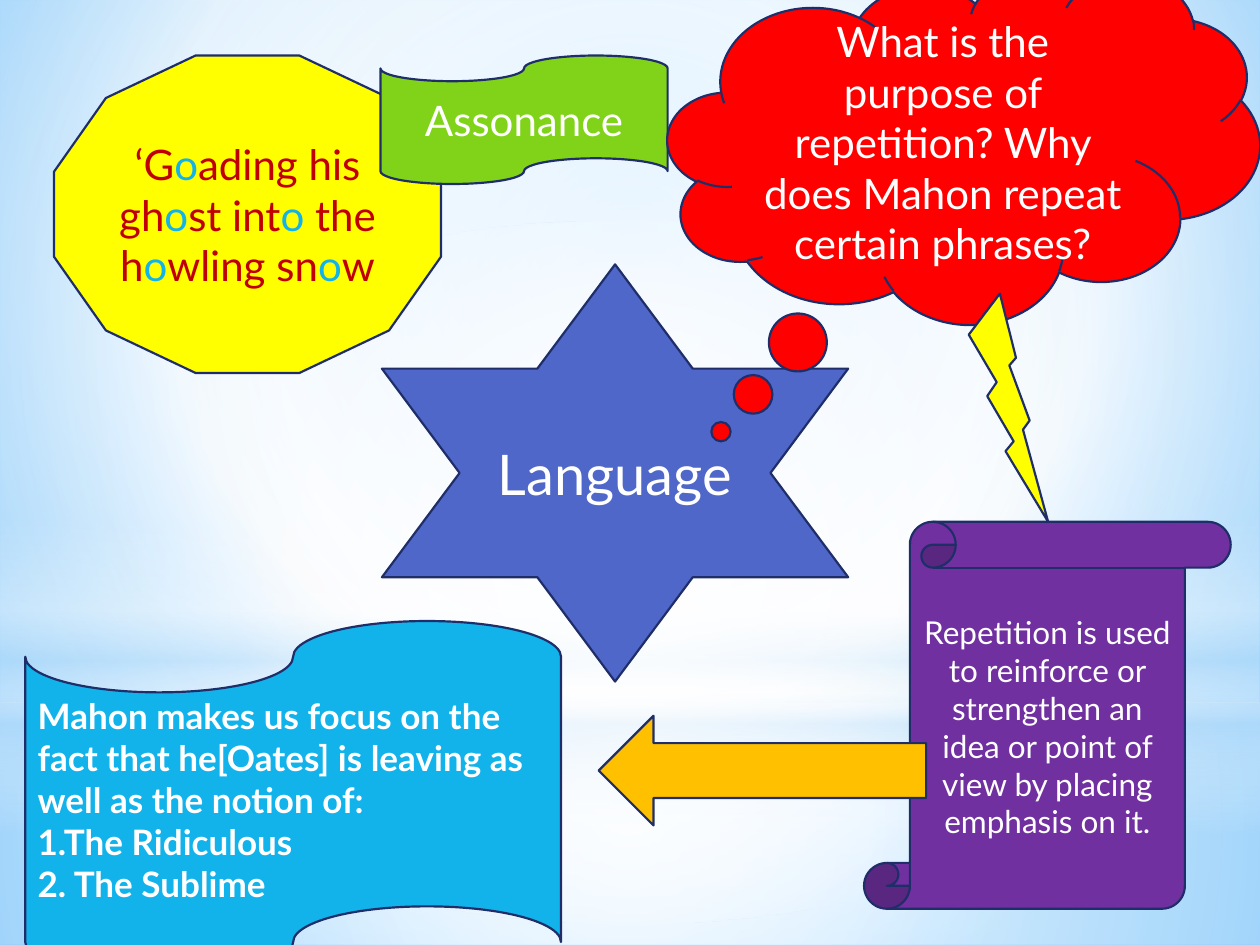
from pptx import Presentation
from pptx.dml.color import RGBColor
from pptx.enum.shapes import MSO_SHAPE as Preset
from pptx.enum.text import MSO_ANCHOR as Anchor, PP_ALIGN as Align
from pptx.oxml import parse_xml
from pptx.oxml.ns import nsdecls, qn
from pptx.util import Cm, Pt

WHITE = RGBColor(0xFF, 0xFF, 0xFF)
NAVY = RGBColor(0x1F, 0x2E, 0x69)
INDIGO = RGBColor(0x4E, 0x67, 0xC8)
YELLOW = RGBColor(0xFF, 0xFF, 0x00)
GREEN = RGBColor(0x81, 0xD3, 0x1A)
RED = RGBColor(0xFF, 0x00, 0x00)
DARK_RED = RGBColor(0xC0, 0x00, 0x00)
PURPLE = RGBColor(0x70, 0x30, 0xA0)
AMBER = RGBColor(0xFF, 0xC0, 0x00)
CYAN = RGBColor(0x12, 0xB2, 0xEB)
SKY = RGBColor(0x9E, 0xD5, 0xFF)
DEEP_SKY = RGBColor(0x5B, 0xB9, 0xFF)
PALE_SKY = RGBColor(0xB4, 0xDC, 0xFA)

CENTRE = (50, 50, 50, 50)


class Board:
    font = "Lato"
    outline = NAVY
    outline_width = Pt(1.25)

    def __init__(self, slide):
        self.slide = slide

    def gradient(self, fill, owner, stops, focus):
        fill.gradient()
        old = owner.find(".//" + qn("a:gradFill"))
        colours = "".join(
            f'<a:gs pos="{position * 1000}"><a:srgbClr val="{colour}">'
            f'<a:alpha val="{opacity * 1000}"/></a:srgbClr></a:gs>'
            for position, colour, opacity in stops
        )
        if focus:
            left, top, right, bottom = (side * 1000 for side in focus)
            shade = (
                f'<a:path path="circle"><a:fillToRect l="{left}" t="{top}" '
                f'r="{right}" b="{bottom}"/></a:path>'
            )
        else:
            shade = '<a:lin ang="5400000" scaled="0"/>'
        new = parse_xml(
            f'<a:gradFill {nsdecls("a")} rotWithShape="1">'
            f"<a:gsLst>{colours}</a:gsLst>{shade}</a:gradFill>"
        )
        old.getparent().replace(old, new)

    def backdrop(self, stops, focus):
        self.gradient(self.slide.background.fill, self.slide.element, stops, focus)

    def place(self, preset, box):
        shape = self.slide.shapes.add_shape(preset, *(Cm(n) for n in box))
        shape.shadow.inherit = False
        return shape

    def glow(self, preset, box, stops, focus=CENTRE):
        layer = self.place(preset, box)
        layer.line.fill.background()
        self.gradient(layer.fill, layer.element, stops, focus)

    def figure(self, preset, box, colour):
        shape = self.place(preset, box)
        shape.fill.solid()
        shape.fill.fore_color.rgb = colour
        shape.line.color.rgb = self.outline
        shape.line.width = self.outline_width
        return shape

    def style(self, run, size, colour=WHITE, bold=False):
        run.font.name = self.font
        run.font.size = Pt(size)
        run.font.color.rgb = colour
        run.font.bold = bold

    def label(self, shape, text, size, bold=False, align=Align.CENTER):
        frame = shape.text_frame
        frame.word_wrap = True
        frame.vertical_anchor = Anchor.MIDDLE
        frame.text = text
        for paragraph in frame.paragraphs:
            paragraph.alignment = align
            for run in paragraph.runs:
                self.style(run, size, bold=bold)

    def vowel_label(self, shape, text, vowel, size, colour, vowel_colour):
        self.label(shape, "", size)
        paragraph = shape.text_frame.paragraphs[0]
        for part in text.replace(vowel, f"|{vowel}|").split("|"):
            run = paragraph.add_run()
            run.text = part
            self.style(run, size, vowel_colour if part == vowel else colour)


def main():
    deck = Presentation()
    deck.slide_width, deck.slide_height = Cm(25.4), Cm(19.05)
    board = Board(deck.slides.add_slide(deck.slide_layouts[6]))

    board.backdrop(
        [(0, SKY, 100), (60, WHITE, 100), (100, DEEP_SKY, 100)], (20, 10, 20, 60)
    )
    board.glow(Preset.RECTANGLE, (0, 14.17, 25.4, 4.88),
               [(0, WHITE, 91), (37, WHITE, 76), (100, PALE_SKY, 79)])
    board.glow(Preset.RECTANGLE, (0, 0, 25.4, 14.17),
               [(0, WHITE, 89), (48, WHITE, 62), (100, PALE_SKY, 79)])
    board.glow(Preset.RECTANGLE, (0, 10.46, 25.4, 6.35),
               [(0, WHITE, 0), (29, WHITE, 30), (45, PALE_SKY, 40),
                (55, WHITE, 26), (65, PALE_SKY, 60), (100, WHITE, 0)], None)
    board.glow(Preset.OVAL, (0, 4.45, 25.4, 14.17),
               [(0, WHITE, 100), (56, WHITE, 0)])

    topic = board.figure(Preset.STAR_6_POINT, (7.7, 5.33, 9.4, 8.41), INDIGO)
    board.label(topic, "Language", 32)

    quote = board.figure(Preset.DODECAGON, (1.09, 1.12, 7.8, 6.4), YELLOW)
    board.vowel_label(quote, "‘Goading his ghost into the howling snow", "o",
                      24, DARK_RED, CYAN)

    device = board.figure(
        Preset.FLOWCHART_PUNCHED_TAPE, (7.67, 1.12, 5.79, 2.59), GREEN)
    board.label(device, "Assonance", 24)

    question = board.figure(Preset.CLOUD_CALLOUT, (13.46, -0.48, 11.94, 7.01), RED)
    question.adjustments[0] = -0.41
    question.adjustments[1] = 0.81
    board.label(
        question,
        "What is the purpose of repetition? Why does Mahon repeat certain phrases?",
        24,
    )

    board.figure(Preset.LIGHTNING_BOLT, (19.53, 5.92, 1.6, 4.6), YELLOW)

    answer = board.figure(Preset.VERTICAL_SCROLL, (17.42, 10.52, 7.39, 7.8), PURPLE)
    board.label(
        answer,
        "Repetition is used to reinforce or strengthen an idea or point of view "
        "by placing emphasis on it.",
        18,
    )

    board.figure(Preset.LEFT_ARROW, (12.07, 14.43, 6.6, 2.21), AMBER)

    focus = board.figure(
        Preset.FLOWCHART_PUNCHED_TAPE, (0.51, 12.52, 10.8, 7.19), CYAN)
    board.label(
        focus,
        "Mahon makes us focus on the fact that he[Oates] is leaving as well as "
        "the notion of:\n1.The Ridiculous\n2. The Sublime",
        20, bold=True, align=Align.LEFT,
    )

    deck.save("out.pptx")


if __name__ == "__main__":
    main()
